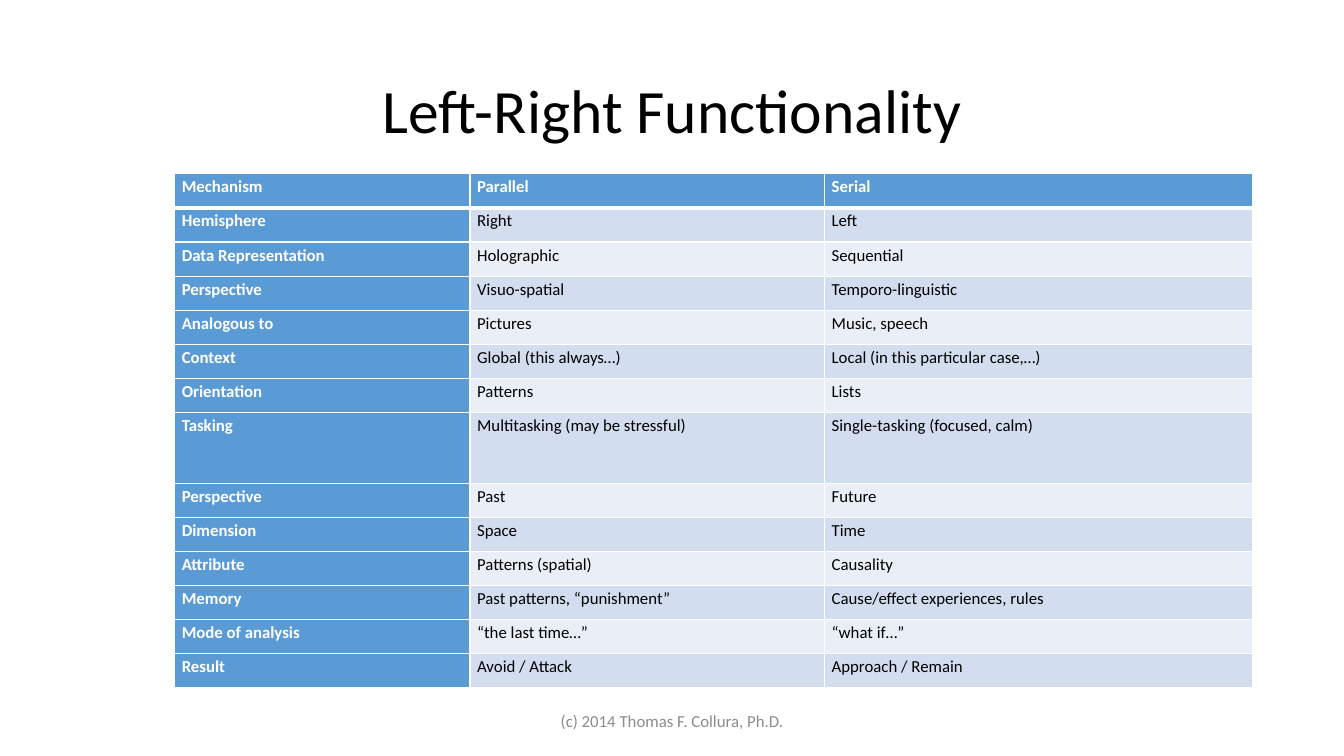
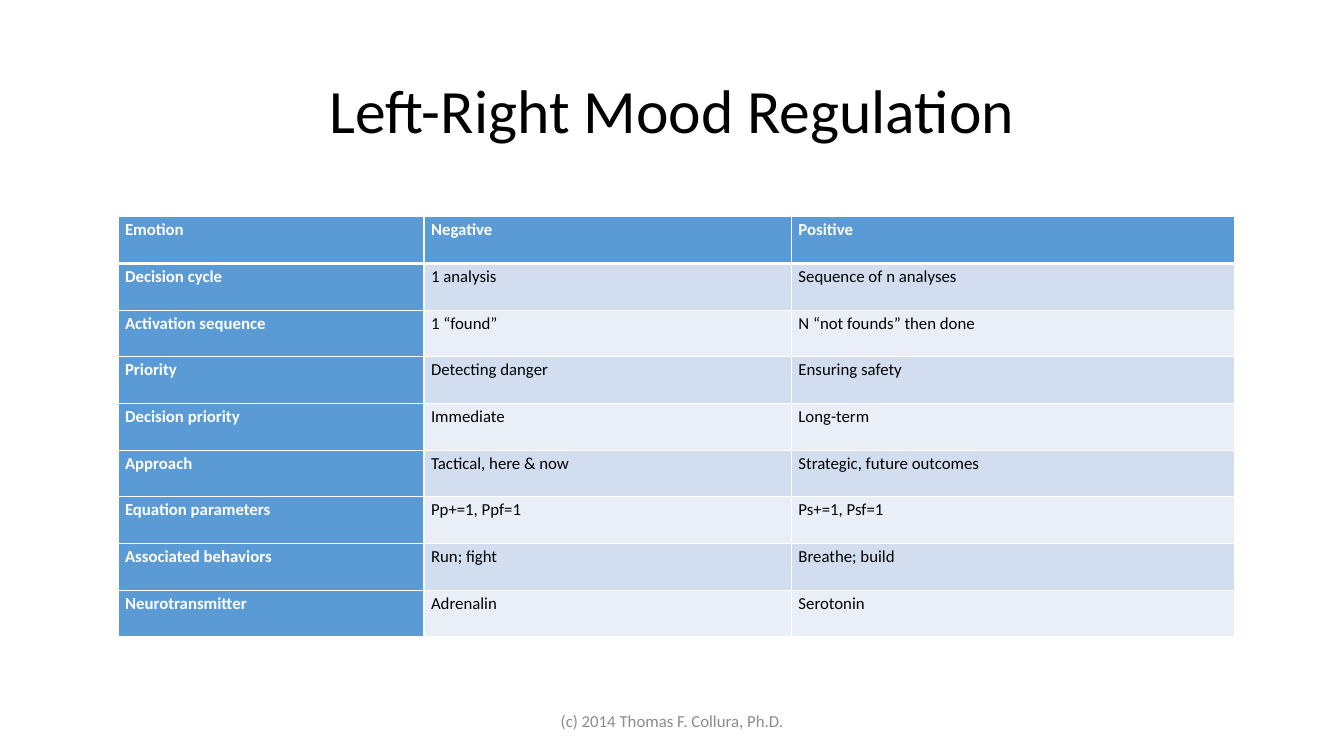
from lxml import etree
from pptx import Presentation
from pptx.dml.color import RGBColor
from pptx.enum.text import MSO_ANCHOR as Anchor, PP_ALIGN as Align
from pptx.oxml.ns import qn
from pptx.util import Inches, Pt

# Shared look
rgb = RGBColor.from_string
FONT = "Calibri"
WHITE, BLACK, GREY = "FFFFFF", "000000", "8C8C8C"
BLUE, BANDS = "5B9BD5", ("EAEFF7", "D2DEEF")
COLUMN_SHARES = (0.274, 0.329, 0.397)
FOOTER = "(c) 2014 Thomas F. Collura, Ph.D."

deck = Presentation()
deck.slide_width, deck.slide_height = Inches(13.33), Inches(7.5)
# The page is a grid of 100 columns by 100 rows
COL, ROW = deck.slide_width / 100, deck.slide_height / 100
TITLE_AREA = (6.9, 5.33, 86.25, 19.33)
FOOTER_AREA = (33.13, 92.67, 33.75, 5.33)

# Title, table area, tall rows (row number: height in ordinary rows), table text
PAGES = [
    ("Left-Right Functionality", (13, 23, 80.2, 68), {7: 2.07}, [
        ("Mechanism", "Parallel", "Serial"),
        ("Hemisphere", "Right", "Left"),
        ("Data Representation", "Holographic", "Sequential"),
        ("Perspective", "Visuo-spatial", "Temporo-linguistic"),
        ("Analogous to", "Pictures", "Music, speech"),
        ("Context", "Global (this always…)", "Local (in this particular case,…)"),
        ("Orientation", "Patterns", "Lists"),
        ("Tasking", "Multitasking (may be stressful)", "Single-tasking (focused, calm)"),
        ("Perspective", "Past", "Future"),
        ("Dimension", "Space", "Time"),
        ("Attribute", "Patterns (spatial)", "Causality"),
        ("Memory", "Past patterns, “punishment”", "Cause/effect experiences, rules"),
        ("Mode of analysis", "“the last time…”", "“what if…”"),
        ("Result", "Avoid / Attack", "Approach / Remain"),
    ]),
    ("Left-Right Mood Regulation", (8.78, 28.67, 83.1, 55.6), {}, [
        ("Emotion", "Negative", "Positive"),
        ("Decision cycle", "1 analysis", "Sequence of n analyses"),
        ("Activation sequence", "1 “found”", "N “not founds” then done"),
        ("Priority", "Detecting danger", "Ensuring safety"),
        ("Decision priority", "Immediate", "Long-term"),
        ("Approach", "Tactical, here & now", "Strategic, future outcomes"),
        ("Equation parameters", "Pp+=1, Ppf=1", "Ps+=1, Psf=1"),
        ("Associated behaviors", "Run; fight", "Breathe; build"),
        ("Neurotransmitter", "Adrenalin", "Serotonin"),
    ]),
]


def write(frame, text, size=12, color=BLACK, bold=False, align=Align.LEFT,
          anchor=Anchor.TOP, spacing=1.0):
    """Put one formatted paragraph into a text frame."""
    frame.word_wrap = True
    frame.vertical_anchor = anchor
    para = frame.paragraphs[0]
    para.alignment, para.line_spacing = align, spacing
    span = para.add_run()
    span.text = text
    span.font.name, span.font.size, span.font.bold = FONT, Pt(size), bold
    span.font.color.rgb = rgb(color)


def area(left, top, width, height):
    """Turn grid columns and rows into slide lengths."""
    return [int(n) for n in (left * COL, top * ROW, width * COL, height * ROW)]


for title, table_area, tall_rows, rows in PAGES:
    page = deck.slides.add_slide(deck.slide_layouts[5])

    # Title
    box = page.shapes.title
    box.left, box.top, box.width, box.height = area(*TITLE_AREA)
    write(box.text_frame, title, size=44, align=Align.CENTER,
          anchor=Anchor.MIDDLE, spacing=0.9)

    # Table grid
    left, top, width, height = area(*table_area)
    table = page.shapes.add_table(len(rows), len(COLUMN_SHARES),
                                  left, top, width, height).table
    for column, share in zip(table.columns, COLUMN_SHARES):
        column.width = int(width * share)
    weights = [tall_rows.get(r, 1) for r in range(len(rows))]
    for line, weight in zip(table.rows, weights):
        line.height = int(height * weight / sum(weights))

    # Table cells
    for r, texts in enumerate(rows):
        for c, text in enumerate(texts):
            cell = table.cell(r, c)
            heading = r == 0 or c == 0
            cell.margin_left = cell.margin_right = Inches(0.07)
            cell.margin_top = cell.margin_bottom = 0
            write(cell.text_frame, text, color=WHITE if heading else BLACK,
                  bold=heading, spacing=1.15)
            # White borders, thick under the header row
            properties = cell._tc.get_or_add_tcPr()
            for side in ("L", "R", "T", "B"):
                thick = (r, side) in ((0, "B"), (1, "T"))
                border = etree.SubElement(properties, qn(f"a:ln{side}"),
                                          w=str(Pt(3 if thick else 1)))
                solid = etree.SubElement(border, qn("a:solidFill"))
                etree.SubElement(solid, qn("a:srgbClr"), val=WHITE)
            cell.fill.solid()
            cell.fill.fore_color.rgb = rgb(BLUE if heading else BANDS[r % 2])

    # Footer
    box = page.shapes.add_textbox(*area(*FOOTER_AREA))
    write(box.text_frame, FOOTER, color=GREY, align=Align.CENTER,
          anchor=Anchor.MIDDLE)

deck.save("out.pptx")
